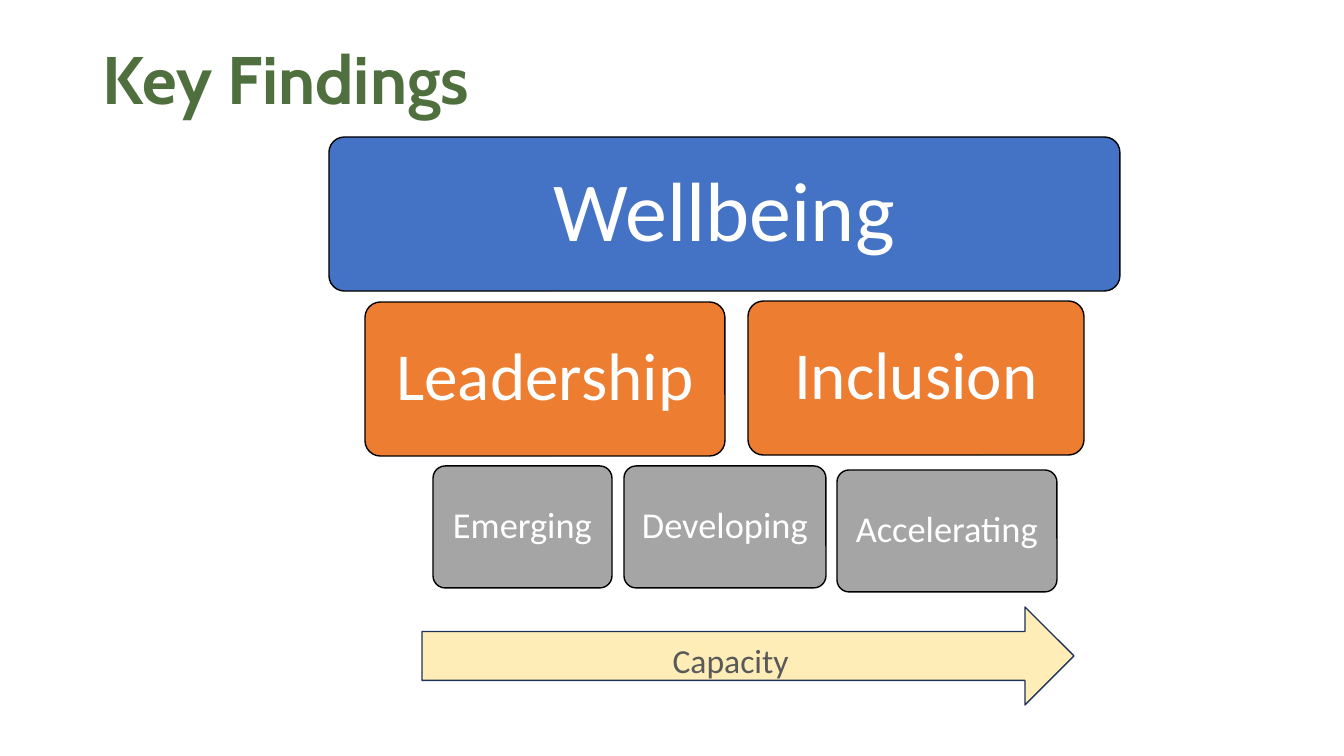
from lxml.etree import SubElement as Sub
from pptx import Presentation
from pptx.dml.color import RGBColor
from pptx.enum.shapes import MSO_SHAPE as Kind
from pptx.enum.text import MSO_ANCHOR as Anchor, PP_ALIGN as Align
from pptx.oxml.ns import qn
from pptx.util import Pt

SCALE = 914400 / 100.8


def px(n):
    return round(n * SCALE)


def rgb(code):
    return RGBColor.from_string(code)


class Page:
    head, body = "Cabin", "Calibri"
    green, white, black = "4F703E", "FFFFFF", "000000"
    blue, orange, gray = "4472C4", "ED7D31", "A5A5A5"
    gold, navy, dark = "FFD966", "1E3256", "595959"

    def __init__(self, deck):
        self.slide = deck.slides.add_slide(deck.slide_layouts[6])
        fill = self.slide.background.fill
        fill.solid()
        fill.fore_color.rgb = rgb(self.white)

    def run(self, para, text, size, color, font=None, bold=False):
        run = para.add_run()
        run.text = text
        run.font.size = Pt(size)
        run.font.name = font or self.body
        run.font.bold = bold
        run.font.color.rgb = rgb(color)

    def frame(self, shape, align):
        frame = shape.text_frame
        frame.word_wrap = True
        frame.vertical_anchor = Anchor.MIDDLE
        para = frame.paragraphs[0]
        para.alignment = align
        return para

    def shape(self, kind, box, fill, line):
        shape = self.slide.shapes.add_shape(kind, *map(px, box))
        shape.shadow.inherit = False
        shape.fill.solid()
        shape.fill.fore_color.rgb = rgb(fill)
        shape.line.color.rgb = rgb(line)
        shape.line.width = Pt(1)
        return shape

    def title(self, text, box):
        shape = self.slide.shapes.add_textbox(*map(px, box))
        para = self.frame(shape, Align.LEFT)
        para.line_spacing = 0.9
        self.run(para, text, 48, self.green, self.head, True)

    def block(self, text, box, fill, size):
        shape = self.shape(Kind.ROUNDED_RECTANGLE, box, fill, self.black)
        shape.adjustments[0] = 0.1
        para = self.frame(shape, Align.CENTER)
        para.line_spacing = 0.9
        self.run(para, text, size, self.white)

    def arrow(self, text, box, alpha):
        shape = self.shape(Kind.RIGHT_ARROW, box, self.gold, self.navy)
        tone = shape.fill._xPr.find(".//" + qn("a:srgbClr"))
        Sub(tone, qn("a:alpha"), val=str(alpha * 1000))
        para = self.frame(shape, Align.CENTER)
        self.run(para, text, 24, self.dark)
        # The larger trailing space sets the line height
        self.run(para, " ", 32, self.black)


def main():
    deck = Presentation()
    deck.slide_width, deck.slide_height = px(1344), px(756)
    page = Page(deck)

    page.title("Key Findings", (93, 40, 1159, 86))
    page.arrow("Capacity", (422, 607, 652, 98), 46)

    # Tiers: fill, text size, height, then (text, left, top, width)
    tiers = [
        (page.blue, 60, 154, [("Wellbeing", 329, 137, 791)]),
        (page.orange, 48, 154, [("Leadership", 365, 302, 360),
                                ("Inclusion", 748, 301, 336)]),
        (page.gray, 26, 122, [("Emerging", 433, 466, 179),
                              ("Developing", 624, 466, 202),
                              ("Accelerating", 837, 470, 220)]),
    ]
    for fill, size, high, blocks in tiers:
        for text, left, top, wide in blocks:
            page.block(text, (left, top, wide, high), fill, size)

    deck.save("out.pptx")


if __name__ == "__main__":
    main()
